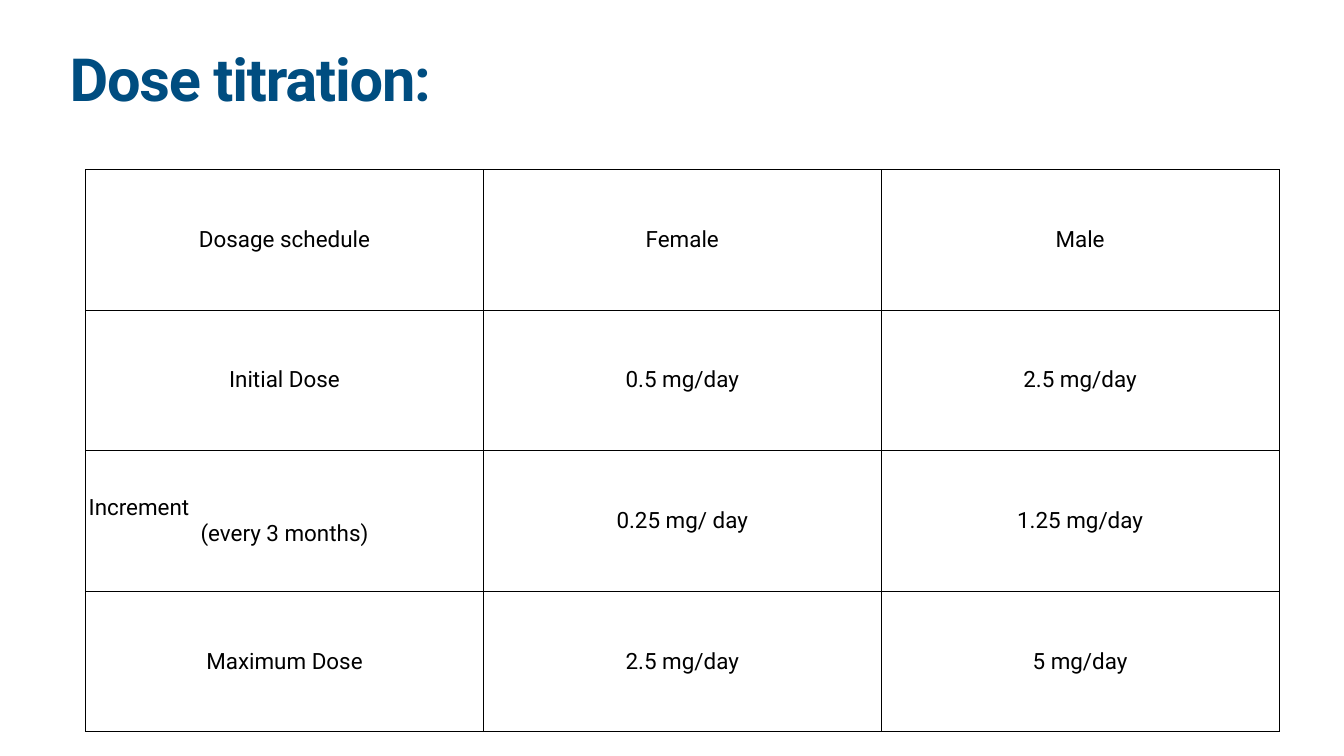
from dataclasses import dataclass

from lxml import etree
from pptx import Presentation
from pptx.dml.color import RGBColor
from pptx.enum.text import MSO_ANCHOR, PP_ALIGN
from pptx.oxml.ns import qn
from pptx.util import Inches, Pt

LEFT = PP_ALIGN.LEFT
CENTER = PP_ALIGN.CENTER
TOP = MSO_ANCHOR.TOP
MIDDLE = MSO_ANCHOR.MIDDLE


@dataclass(frozen=True)
class Theme:
    font: str = "Roboto"
    title_color: str = "004D80"
    text_color: str = "000000"
    border_color: str = "000000"
    title_size: int = 85
    table_size: int = 32
    border_width: int = 1
    inset: float = 0.06


THEME = Theme()

DOSES = [
    ["Dosage schedule", "Female", "Male"],
    ["Initial Dose", "0.5 mg/day", "2.5 mg/day"],
    ["Increment\n(every 3 months)", "0.25 mg/ day", "1.25 mg/day"],
    ["Maximum Dose", "2.5 mg/day", "5 mg/day"],
]


def set_insets(target):
    target.margin_left = target.margin_right = Inches(THEME.inset)
    target.margin_top = target.margin_bottom = Inches(THEME.inset)


def style_paragraph(para, size, color, bold=False):
    para.font.name = THEME.font
    para.font.size = Pt(size)
    para.font.bold = bold
    para.font.color.rgb = RGBColor.from_string(color)


def add_title(page, text, left, top, width, height):
    box = page.shapes.add_textbox(Inches(left), Inches(top), Inches(width), Inches(height))
    frame = box.text_frame
    frame.word_wrap = True
    frame.vertical_anchor = TOP
    set_insets(frame)
    para = frame.paragraphs[0]
    para.line_spacing = 0.8
    span = para.add_run()
    span.text = text
    style_paragraph(para, THEME.title_size, THEME.title_color, bold=True)
    span.font._element.set("spc", "-170")


def add_borders(cell):
    properties = cell._tc.get_or_add_tcPr()
    for position, side in enumerate(("a:lnL", "a:lnR", "a:lnT", "a:lnB")):
        line = etree.Element(qn(side), w=str(Pt(THEME.border_width)))
        fill = etree.SubElement(line, qn("a:solidFill"))
        etree.SubElement(fill, qn("a:srgbClr"), val=THEME.border_color)
        properties.insert(position, line)


def fill_cell(cell, text):
    cell.text = text
    cell.fill.background()
    cell.vertical_anchor = MIDDLE
    set_insets(cell)
    add_borders(cell)
    paragraphs = cell.text_frame.paragraphs
    for para in paragraphs:
        para.alignment = LEFT
        style_paragraph(para, THEME.table_size, THEME.text_color)
    paragraphs[-1].alignment = CENTER


def add_dose_table(page, rows, left, top, width, height):
    frame = page.shapes.add_table(
        len(rows), len(rows[0]), Inches(left), Inches(top), Inches(width), Inches(height)
    )
    table = frame.table
    table.first_row = False
    table.horz_banding = False
    for row_index, row in enumerate(rows):
        for column_index, text in enumerate(row):
            fill_cell(table.cell(row_index, column_index), text)


def main():
    deck = Presentation()
    deck.slide_width = Inches(26.67)
    deck.slide_height = Inches(15)
    page = deck.slides.add_slide(deck.slide_layouts[6])
    add_title(page, "Dose titration:", 1.32, 1.04, 24.03, 1.57)
    add_dose_table(page, DOSES, 1.7, 3.36, 23.68, 11.16)
    deck.save("out.pptx")


if __name__ == "__main__":
    main()
